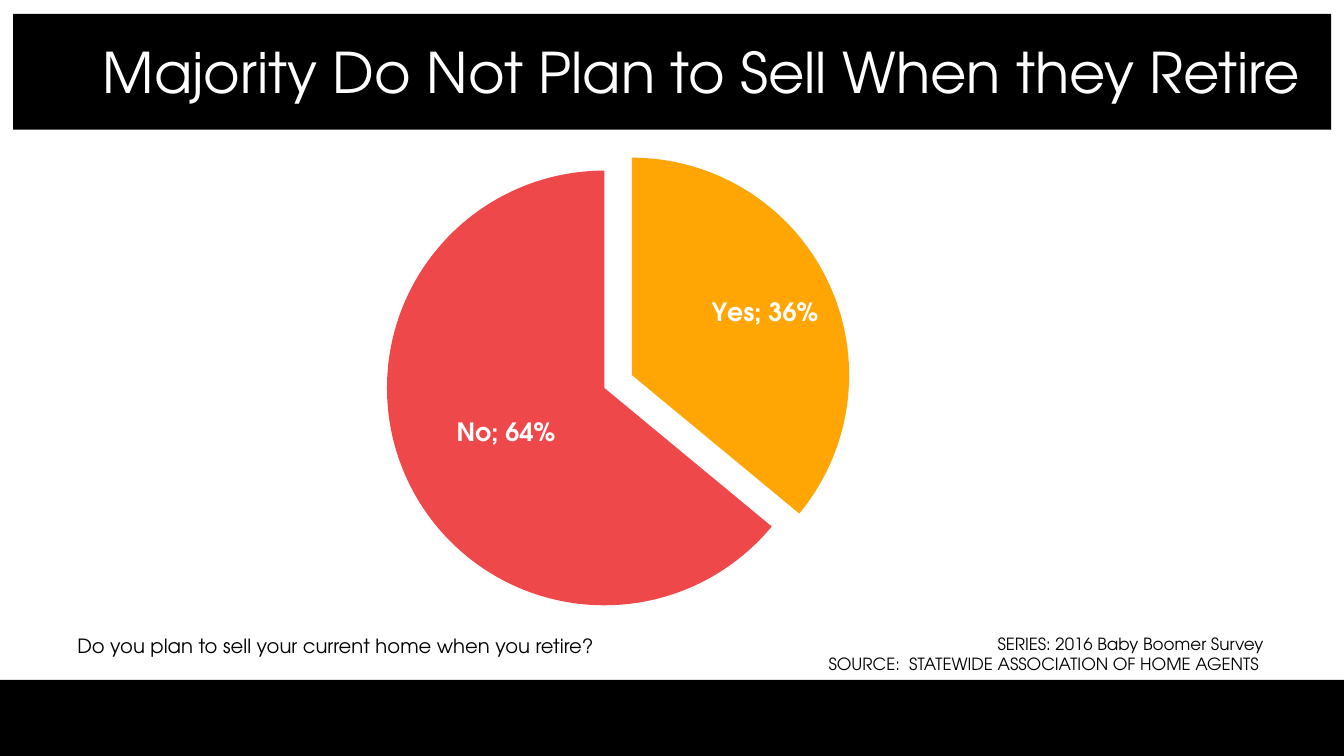
"""Build the slide on plans to sell a home at retirement."""
from lxml.etree import SubElement as Sub
from pptx import Presentation as Deck
from pptx.chart.data import CategoryChartData as Data
from pptx.dml.color import RGBColor as Rgb
from pptx.enum.chart import XL_CHART_TYPE as Kind, XL_LABEL_POSITION as Spot
from pptx.enum.shapes import MSO_SHAPE as Form
from pptx.enum.text import MSO_ANCHOR as Anchor, PP_ALIGN as Align
from pptx.oxml.ns import qn
from pptx.util import Cm, Pt

SIZE = (33.87, 19.05)
THEME = {
    "font": "TeX Gyre Adventor",
    "ink": "000000", "paper": "FFFFFF",
    "yes": "FFA605", "no": "EE484A",
    "title": 40, "label": 18, "note": 14, "credit": 12,
}
BANDS = [(0, 17.13, 33.87, 1.92), (0.33, 0.35, 33.22, 2.92)]
TEXTS = [
    {"lines": ["Majority Do Not Plan to Sell When they Retire"],
     "box": (1.96, 1.04, 31.45, 1.7), "size": "title", "ink": "paper",
     "format": {"alignment": Align.CENTER, "line_spacing": 0.9},
     "anchor": Anchor.MIDDLE},
    {"lines": ["Do you plan to sell your current home when you retire?"],
     "box": (1.7, 15.85, 26.19, 0.86), "size": "note", "ink": "ink",
     "format": {"alignment": Align.LEFT}, "anchor": Anchor.TOP},
    {"lines": ["SERIES: 2016 Baby Boomer Survey",
               "SOURCE:  STATEWIDE ASSOCIATION OF HOME AGENTS "],
     "box": (19.81, 15.85, 12.29, 1.27), "size": "credit", "ink": "ink",
     "format": {"alignment": Align.RIGHT}, "anchor": Anchor.TOP},
]
PIE = {
    "box": (5.92, 3.38, 21.95, 12.47),
    "name": "Series 1",
    "parts": [("Yes", 0.36, "yes"), ("No", 0.64, "no")],
    "burst": 7,
    "plot": {"x": 0.17, "y": 0.03, "w": 0.54, "h": 0.94},
    "shift": {"x": 0.04, "y": -0.03},
}


def apply(item, values):
    for key, val in values.items():
        setattr(item, key, val)


def ink(font, size, color, bold=False):
    apply(font, {"name": THEME["font"], "size": Pt(THEME[size]), "bold": bold})
    font.color.rgb = Rgb.from_string(THEME[color])


def paint(item, color):
    item.fill.solid()
    item.fill.fore_color.rgb = Rgb.from_string(THEME[color])
    item.line.fill.background()


def lay(node, values, modes):
    form = Sub(node, qn("c:manualLayout"))
    for key, val in {**modes, **values}.items():
        Sub(form, qn("c:" + key)).set("val", str(val))


def add_band(slide, box):
    band = slide.shapes.add_shape(Form.RECTANGLE, *map(Cm, box))
    band.shadow.inherit = False
    paint(band, "ink")


def add_text(slide, item):
    frame = slide.shapes.add_textbox(*map(Cm, item["box"])).text_frame
    apply(frame, {"word_wrap": True, "vertical_anchor": item["anchor"],
                  "text": "\n".join(item["lines"])})
    for para in frame.paragraphs:
        apply(para, item["format"])
        for run in para.runs:
            ink(run.font, item["size"], item["ink"])


def split(node):
    mark = node.makeelement(qn("c:separator"))
    mark.text = "; "
    node.find(qn("c:showBubbleSize")).addnext(mark)


def add_pie(slide):
    data = Data(number_format="0%")
    data.categories = [part[0] for part in PIE["parts"]]
    data.add_series(PIE["name"], [part[1] for part in PIE["parts"]])
    chart = slide.shapes.add_chart(Kind.PIE, *map(Cm, PIE["box"]), data).chart
    apply(chart, {"has_legend": False, "has_title": False})
    ink(chart.font, "note", "ink")
    plot = chart.plots[0]
    plot.vary_by_categories = True
    row = plot.series[0]
    row.format.line.fill.background()
    burst = row.format.line._get_or_add_ln().getparent().makeelement(
        qn("c:explosion"), {"val": str(PIE["burst"])})
    row._element.find(qn("c:spPr")).addnext(burst)
    for i, part in enumerate(PIE["parts"]):
        paint(row.points[i].format, part[2])

    tags = row.data_labels
    apply(tags, {"show_value": True, "show_category_name": True,
                 "show_percentage": False, "number_format": "0%",
                 "number_format_is_linked": False, "position": Spot.CENTER})
    ink(tags.font, "label", "paper", True)
    tag = row.points[0].data_label
    ink(tag.font, "label", "paper", True)
    tag.position = Spot.CENTER
    node = tags._element.find(qn("c:dLbl"))
    for key, val in {"showVal": "1", "showCatName": "1",
                     "showPercent": "0"}.items():
        node.find(qn("c:" + key)).set("val", val)
    place = node.makeelement(qn("c:layout"))
    node.find(qn("c:idx")).addnext(place)
    lay(place, PIE["shift"], {})
    for item in (node, tags._element):
        split(item)

    area = chart._chartSpace.chart.plotArea
    for old in area.findall(qn("c:layout")):
        area.remove(old)
    place = area.makeelement(qn("c:layout"))
    area.insert(0, place)
    lay(place, PIE["plot"],
        {"layoutTarget": "inner", "xMode": "edge", "yMode": "edge"})


def main():
    deck = Deck()
    apply(deck, dict(zip(("slide_width", "slide_height"), map(Cm, SIZE))))
    slide = deck.slides.add_slide(deck.slide_layouts[6])
    for box in BANDS:
        add_band(slide, box)
    add_pie(slide)
    for item in TEXTS:
        add_text(slide, item)
    deck.save("out.pptx")


if __name__ == "__main__":
    main()
